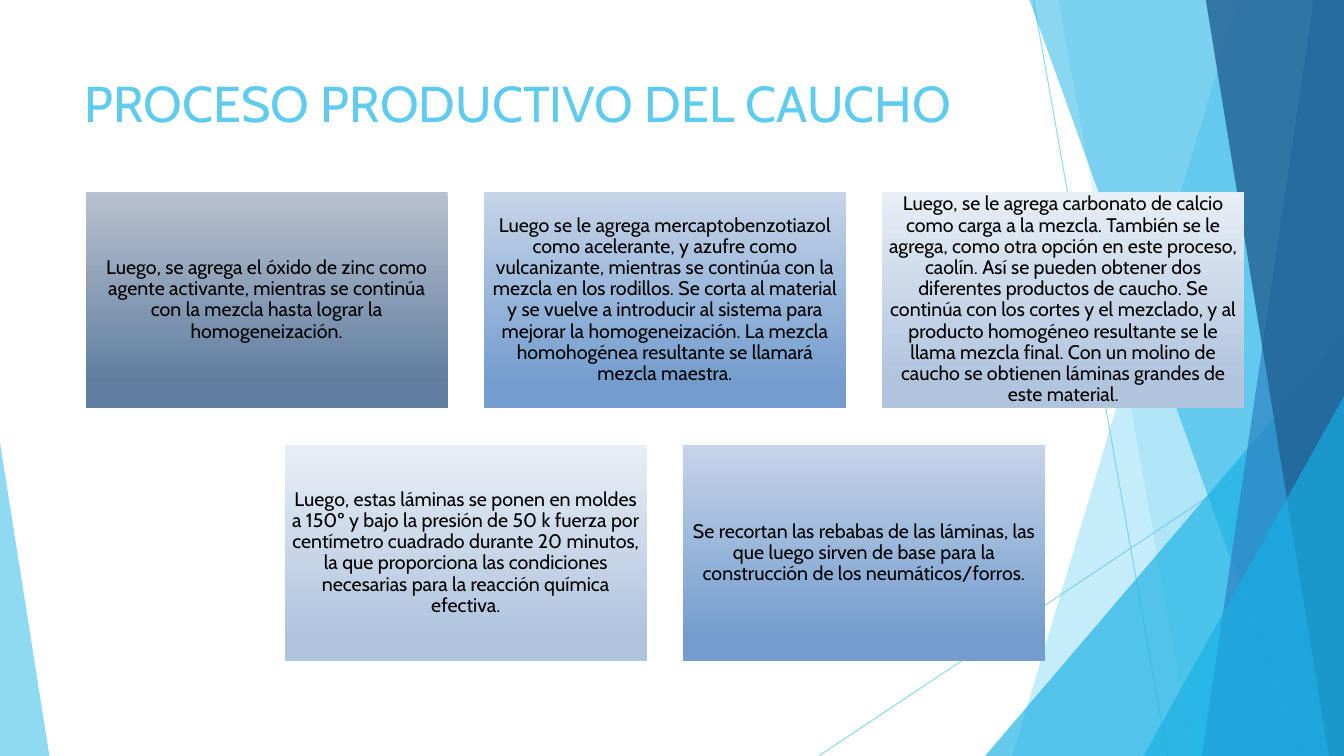
"""Build the slide on the rubber production process."""
import pptx
import pptx.dml.color
import pptx.enum.shapes
import pptx.enum.text
import pptx.oxml.ns
import pptx.oxml.xmlchemy
import pptx.util

Inches = pptx.util.Inches
Pt = pptx.util.Pt
RGBColor = pptx.dml.color.RGBColor
MSO_SHAPE = pptx.enum.shapes.MSO_SHAPE

WIDTH, HEIGHT = 13.33, 7.5
FONT = "Cabin"
SKY = RGBColor(0x5F, 0xCB, 0xEF)
CYAN = RGBColor(0x17, 0xB0, 0xE4)
BLUE = RGBColor(0x2E, 0x83, 0xC3)
NAVY = RGBColor(0x22, 0x62, 0x92)
BLACK = RGBColor(0x00, 0x00, 0x00)
SLATE = RGBColor(0xB8, 0xC1, 0xCF), RGBColor(0x61, 0x7E, 0xA0)
MEDIUM = RGBColor(0xC6, 0xD4, 0xE8), RGBColor(0x74, 0x9D, 0xCE)
PALE = RGBColor(0xE8, 0xEE, 0xF5), RGBColor(0xB0, 0xC4, 0xDE)

CARD_WIDTH, CARD_HEIGHT, GAP = 3.59, 2.15, 0.36
CARDS_LEFT, CARDS_TOP = 0.85, 1.9


def set_opacity(shape, percent):
    """Make the only colour of a shape partly transparent."""
    colour = next(shape._element.spPr.iter(pptx.oxml.ns.qn("a:srgbClr")))
    alpha = pptx.oxml.xmlchemy.OxmlElement("a:alpha")
    alpha.set("val", str(percent * 1000))
    colour.append(alpha)


deck = pptx.Presentation()
deck.slide_width, deck.slide_height = Inches(WIDTH), Inches(HEIGHT)
page = deck.slides.add_slide(deck.slide_layouts[6])
shapes = page.shapes

for start_x, start_y, end_x in [(10.25, 0, 11.58), (WIDTH, 4.03, 8.12)]:
    ray = shapes.add_connector(
        pptx.enum.shapes.MSO_CONNECTOR.STRAIGHT,
        Inches(start_x), Inches(start_y), Inches(end_x), Inches(HEIGHT))
    ray.line.color.rgb = SKY
    ray.line.width = Pt(0.75)
    ray._element.spPr.append(pptx.oxml.xmlchemy.OxmlElement("a:effectLst"))
    set_opacity(ray, 70)

facets = [
    ("band", 12.28, 10.04, SKY, 36),
    ("band", 10.5, 11.83, SKY, 20),
    ("triangle", (9.77, 3.33, 3.56), 1, CYAN, 66),
    ("band", 10.21, 12.91, CYAN, 50),
    ("band", 13.03, 11.92, BLUE, 70),
    ("band", 11.96, 13.18, NAVY, 80),
    ("triangle", (11.34, 3.93, 1.99), 1, CYAN, 66),
    ("triangle", (0, 4.39, 0.49), 0, SKY, 70),
]
for kind, first, second, colour, opacity in facets:
    if kind == "band":
        outline = shapes.build_freeform(Inches(first), 0)
        corners = [(WIDTH, 0), (WIDTH, HEIGHT), (second, HEIGHT)]
        outline.add_line_segments([(Inches(x), Inches(y)) for x, y in corners])
        facet = outline.convert_to_shape()
    else:
        left, top, width = first
        facet = shapes.add_shape(
            MSO_SHAPE.ISOSCELES_TRIANGLE, Inches(left), Inches(top),
            Inches(width), Inches(HEIGHT - top))
        facet.adjustments[0] = second
    facet.shadow.inherit = False
    facet.line.fill.background()
    facet.fill.solid()
    facet.fill.fore_color.rgb = colour
    set_opacity(facet, opacity)

title = shapes.add_textbox(Inches(0.74), Inches(0.67), Inches(9.4), Inches(1.44))
title.text_frame.word_wrap = True
para = title.text_frame.paragraphs[0]
para.text = "PROCESO PRODUCTIVO DEL CAUCHO"
para.font.name, para.font.size = FONT, Pt(36)
para.font.color.rgb = SKY

steps = [
    (0, 0, SLATE, "Luego, se agrega el óxido de zinc como agente activante, "
     "mientras se continúa con la mezcla hasta lograr la homogeneización."),
    (1, 0, MEDIUM, "Luego se le agrega mercaptobenzotiazol como acelerante, y "
     "azufre como vulcanizante, mientras se continúa con la mezcla en los "
     "rodillos. Se corta al material y se vuelve a introducir al sistema para "
     "mejorar la homogeneización. La mezcla homohogénea resultante se llamará "
     "mezcla maestra."),
    (2, 0, PALE, "Luego, se le agrega carbonato de calcio como carga a la "
     "mezcla. También se le agrega, como otra opción en este proceso, caolín. "
     "Así se pueden obtener dos diferentes productos de caucho. Se continúa "
     "con los cortes y el mezclado, y al producto homogéneo resultante se le "
     "llama mezcla final. Con un molino de caucho se obtienen láminas grandes "
     "de este material."),
    (0.5, 1, PALE, "Luego, estas láminas se ponen en moldes a 150º y bajo la "
     "presión de 50 k fuerza por centímetro cuadrado durante 20 minutos, la "
     "que proporciona las condiciones necesarias para la reacción química "
     "efectiva."),
    (1.5, 1, MEDIUM, "Se recortan las rebabas de las láminas, las que luego "
     "sirven de base para la construcción de los neumáticos/forros."),
]
for column, row, colours, text in steps:
    card = shapes.add_shape(
        MSO_SHAPE.RECTANGLE,
        Inches(CARDS_LEFT + column * (CARD_WIDTH + GAP)),
        Inches(CARDS_TOP + row * (CARD_HEIGHT + GAP)),
        Inches(CARD_WIDTH), Inches(CARD_HEIGHT))
    card.shadow.inherit = False
    card.line.fill.background()
    card.fill.gradient()
    card.fill.gradient_angle = 270
    for stop, position, colour in zip(card.fill.gradient_stops, (0, 0.88), colours):
        stop.position = position
        stop.color.rgb = colour
    frame = card.text_frame
    frame.word_wrap = True
    frame.vertical_anchor = pptx.enum.text.MSO_ANCHOR.MIDDLE
    frame.margin_left = frame.margin_right = Inches(0.06)
    frame.margin_top = frame.margin_bottom = Inches(0.06)
    para = frame.paragraphs[0]
    para.text = text
    para.alignment = pptx.enum.text.PP_ALIGN.CENTER
    para.line_spacing = 0.9
    para.font.name, para.font.size = FONT, Pt(14)
    para.font.color.rgb = BLACK

deck.save("out.pptx")
